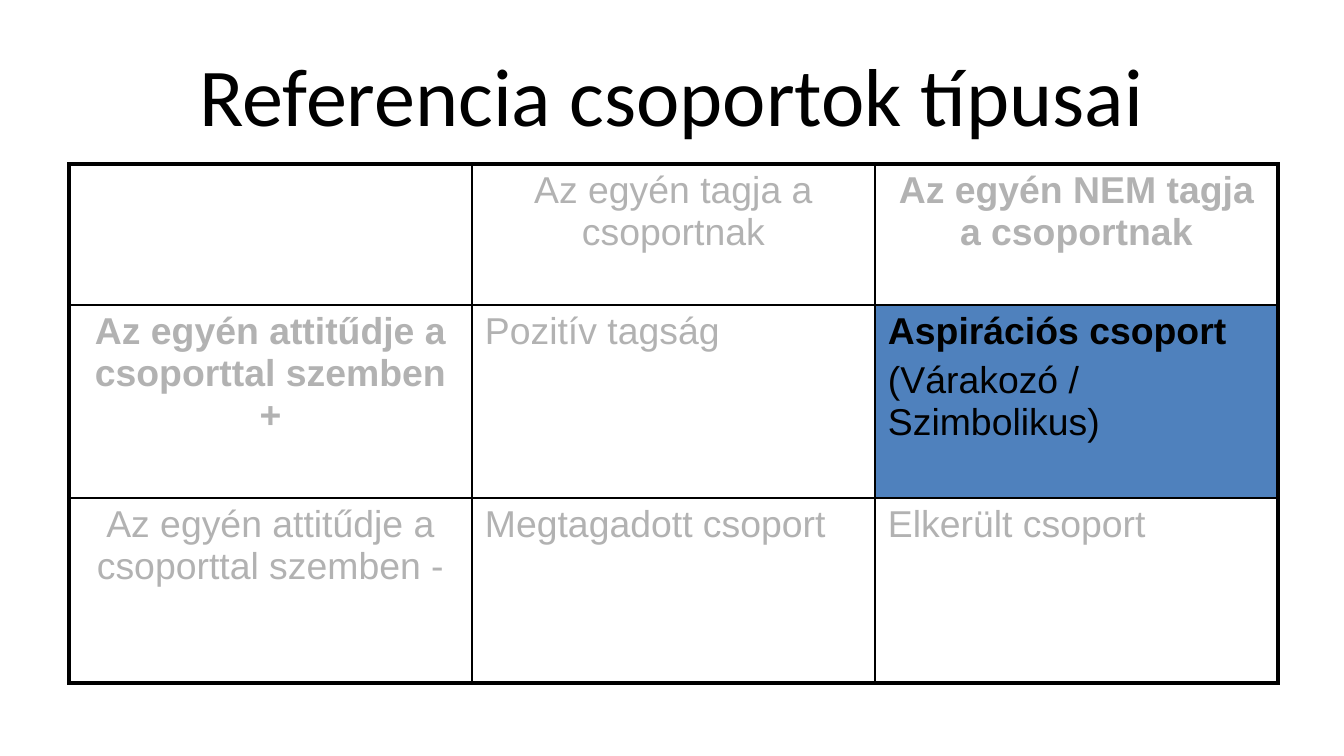
from lxml.etree import SubElement
from pptx import Presentation
from pptx.dml.color import RGBColor
from pptx.enum.text import MSO_ANCHOR, PP_ALIGN
from pptx.oxml.ns import qn
from pptx.util import Pt

PX = 914400 / 134.4  # EMU in one px
BLACK, GREY, BLUE = "000000", "B2B2B2", "4F81BD"
THIN, THICK = 1, 2.25


def px(length):
    return round(length * PX)


def add_run(paragraph, text, font, size, color, bold=False):
    run = paragraph.add_run()
    run.text = text
    run.font.name = font
    run.font.size = Pt(size)
    run.font.bold = bold
    run.font.color.rgb = RGBColor.from_string(color)


prs = Presentation()
prs.slide_width, prs.slide_height = px(1344), px(756)
slide = prs.slides.add_slide(prs.slide_layouts[5])

# Title
title = slide.shapes.title
title.left, title.top, title.width, title.height = px(67), px(31), px(1210), px(125)
title.text_frame.vertical_anchor = MSO_ANCHOR.MIDDLE
heading = title.text_frame.paragraphs[0]
heading.alignment = PP_ALIGN.CENTER
add_run(heading, "Referencia csoportok típusai", "Calibri", 44, BLACK)

# Matrix content: each cell holds (text, bold) paragraphs
group_types = [
    [[],
     [("Az egyén tagja a csoportnak", False)],
     [("Az egyén NEM tagja a csoportnak", True)]],
    [[("Az egyén attitűdje a csoporttal szemben +", True)],
     [("Pozitív tagság", False)],
     [("Aspirációs csoport", True), ("(Várakozó / Szimbolikus)", False)]],
    [[("Az egyén attitűdje a csoporttal szemben -", False)],
     [("Megtagadott csoport", False)],
     [("Elkerült csoport", False)]],
]
highlighted = (1, 2)
column_width = 403
row_heights = [141, 193, 185]
last = len(group_types) - 1

# Matrix grid
matrix = slide.shapes.add_table(3, 3, px(69), px(164), px(3 * column_width),
                                px(sum(row_heights))).table
matrix.first_row = matrix.horz_banding = False
for column in matrix.columns:
    column.width = px(column_width)
for row, height in zip(matrix.rows, row_heights):
    row.height = px(height)

for r, row_content in enumerate(group_types):
    for c, lines in enumerate(row_content):
        cell = matrix.cell(r, c)
        cell.margin_left = cell.margin_right = px(13)
        cell.margin_top = cell.margin_bottom = px(6)

        # Thick outer frame, thin inner lines
        outer_sides = {"L": c == 0, "R": c == last, "T": r == 0, "B": r == last}
        for side, outer in outer_sides.items():
            border = SubElement(cell._tc.get_or_add_tcPr(), qn(f"a:ln{side}"),
                                w=str(Pt(THICK if outer else THIN)))
            border_fill = SubElement(border, qn("a:solidFill"))
            SubElement(border_fill, qn("a:srgbClr"), val=BLACK)

        # Only the group under discussion stands out
        if (r, c) == highlighted:
            cell.fill.solid()
            cell.fill.fore_color.rgb = RGBColor.from_string(BLUE)
            text_color = BLACK
        else:
            cell.fill.background()
            text_color = GREY

        # Headers are centred, group names left-aligned
        for i, (text, bold) in enumerate(lines):
            frame = cell.text_frame
            paragraph = frame.add_paragraph() if i else frame.paragraphs[0]
            paragraph.alignment = PP_ALIGN.CENTER if 0 in (r, c) else PP_ALIGN.LEFT
            if i:
                paragraph.space_before = Pt(4)
            add_run(paragraph, text, "Arial", 20, text_color, bold)

prs.save("out.pptx")
